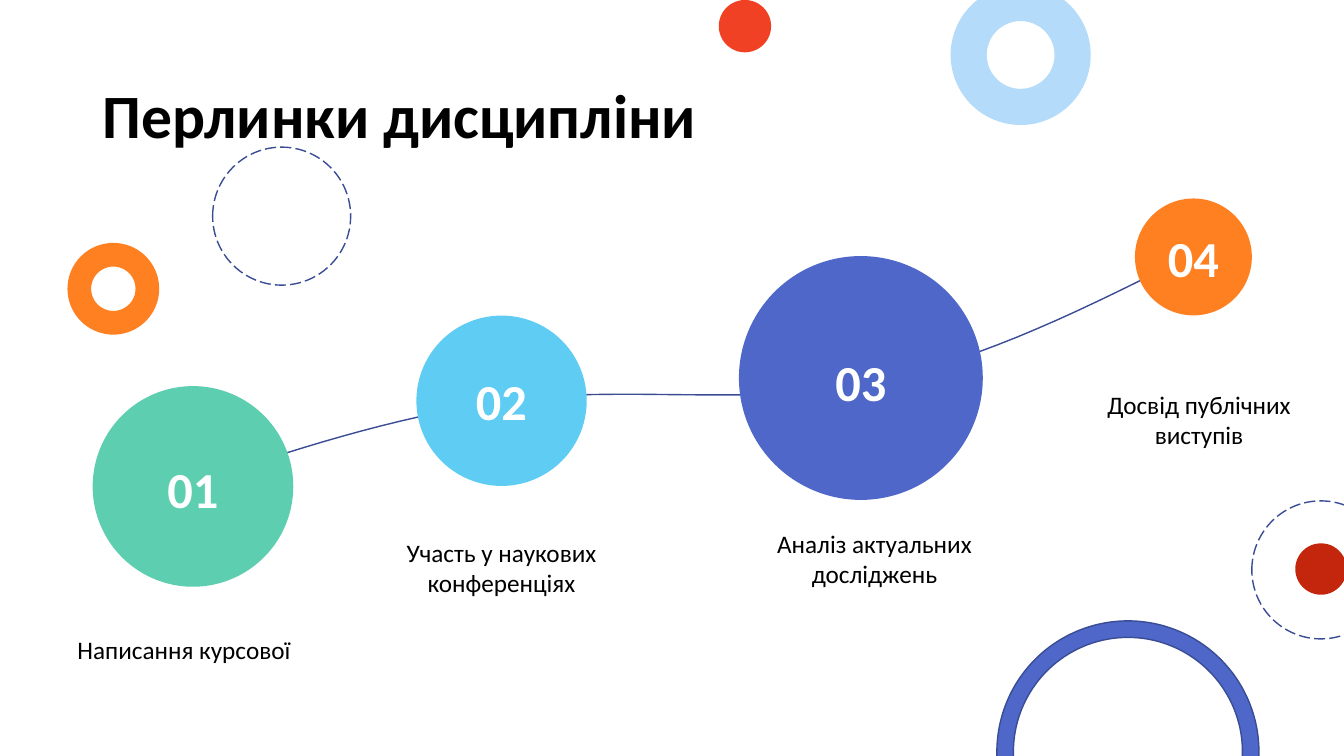
from pptx import Presentation
from pptx.dml.color import RGBColor
from pptx.enum.dml import MSO_LINE
from pptx.enum.shapes import MSO_SHAPE
from pptx.enum.text import MSO_ANCHOR, PP_ALIGN
from pptx.util import Pt

OVAL, RING = MSO_SHAPE.OVAL, MSO_SHAPE.DONUT
DASH = MSO_LINE.LONG_DASH
LEFT, CENTER = PP_ALIGN.LEFT, PP_ALIGN.CENTER
TOP, MIDDLE = MSO_ANCHOR.TOP, MSO_ANCHOR.MIDDLE

HUES = {
    "black": "000000", "white": "FFFFFF", "navy": "3A4C94", "blue": "4E67C8",
    "sky": "5ECCF3", "pale": "B4DCFA", "green": "5DCEAF", "orange": "FF8021",
    "red": "F14124", "dark": "C3260C",
}

TITLE = ("Перлинки дисципліни", (66.2, 28.8, 828, 104.4))

# number, circle (left, top, size), hue, number top, caption, caption spot
STEPS = [
    ("01", (66.2, 275.8, 143.3), "green", 324,
     "Написання курсової", (41.8, 449.3)),
    ("02", (297.4, 225.4, 121.7), "sky", 260.6,
     "Участь у наукових конференціях", (268.6, 380.2)),
    ("03", (527.8, 182.9, 174.2), "blue", 247,
     "Аналіз актуальних досліджень", (535, 373.7)),
    ("04", (810.7, 141.8, 83.5), "orange", 158.4,
     "Досвід публічних виступів", (766.8, 274.3)),
]

DECOR = [
    (OVAL, (513.4, 0, 37.4), "red", None, None, None),
    (RING, (712.1, 443.5, 187.2), "blue", "navy", None, 0.063),
    (RING, (48.2, 173.5, 65.5), "orange", None, None, 0.258),
    (RING, (679, -10.8, 100.1), "pale", None, None, 0.258),
    (OVAL, (151.9, 105.1, 98.6), None, "navy", DASH, None),
    (OVAL, (894.2, 357.8, 98.6), None, "navy", DASH, None),
    (OVAL, (925.2, 388.1, 36.7), "dark", None, None, None),
]

CURVE = [
    (137.5, 345.6), (208, 321.8), (279.4, 298.1), (360, 286.6),
    (440.6, 274.3), (540, 290.9), (622.1, 273.6),
    (704.9, 256.3), (779, 218.2), (853.9, 180.7),
]
PARTS = 16

FONTS = {
    "title": {"name": "Calibri", "size": Pt(44), "bold": True},
    "number": {"name": "Calibri", "size": Pt(36), "bold": True},
    "caption": {"name": "Calibri", "size": Pt(18), "bold": False},
}


def hue(name):
    """Return the named colour."""
    return RGBColor.from_string(HUES[name])


def paint(shape, fill, line, dash=None):
    """Set the fill and outline of a shape."""
    shape.shadow.inherit = False
    if fill:
        shape.fill.solid()
        shape.fill.fore_color.rgb = hue(fill)
    else:
        shape.fill.background()
    if line:
        shape.line.color.rgb = hue(line)
        shape.line.width = Pt(1)
        shape.line.dash_style = dash
    else:
        shape.line.fill.background()


def add_round(slide, kind, place, fill, line=None, dash=None, adj=None):
    """Add a circle or a ring."""
    x, y, size = place
    shape = slide.shapes.add_shape(kind, Pt(x), Pt(y), Pt(size), Pt(size))
    if adj:
        shape.adjustments[0] = adj
    paint(shape, fill, line, dash)


def add_text(slide, text, box, style, color, align=CENTER, anchor=TOP):
    """Add a text box with one paragraph."""
    frame = slide.shapes.add_textbox(*map(Pt, box)).text_frame
    frame.word_wrap = True
    frame.vertical_anchor = anchor
    para = frame.paragraphs[0]
    para.alignment = align
    run = para.add_run()
    run.text = text
    for key, value in FONTS[style].items():
        setattr(run.font, key, value)
    run.font.color.rgb = hue(color)


def bezier(ends, t):
    """Return the point at t on a cubic curve."""
    u = 1 - t
    weights = (u ** 3, 3 * u * u * t, 3 * u * t * t, t ** 3)
    return tuple(Pt(sum(w * p[i] for w, p in zip(weights, ends))) for i in (0, 1))


def add_curve(slide):
    """Draw the line that joins the steps."""
    dots = [bezier(CURVE[k:k + 4], n / PARTS)
            for k in range(0, len(CURVE) - 1, 3) for n in range(1, PARTS + 1)]
    x, y = CURVE[0]
    path = slide.shapes.build_freeform(Pt(x), Pt(y))
    path.add_line_segments(dots, close=False)
    paint(path.convert_to_shape(), None, "navy")


def main():
    """Build the slide and save it."""
    deck = Presentation()
    deck.slide_width, deck.slide_height = Pt(960), Pt(540)
    slide = deck.slides.add_slide(deck.slide_layouts[6])
    add_curve(slide)
    add_text(slide, *TITLE, "title", "black", LEFT, MIDDLE)
    for number, place, fill, top, caption, spot in STEPS:
        x, _, size = place
        add_round(slide, OVAL, place, fill)
        add_text(slide, number, (x + size / 2 - 33.5, top, 67, 51),
                 "number", "white")
        add_text(slide, caption, (*spot, 179.3, 51), "caption", "black")
    for item in DECOR:
        add_round(slide, *item)
    deck.save("out.pptx")


if __name__ == "__main__":
    main()
